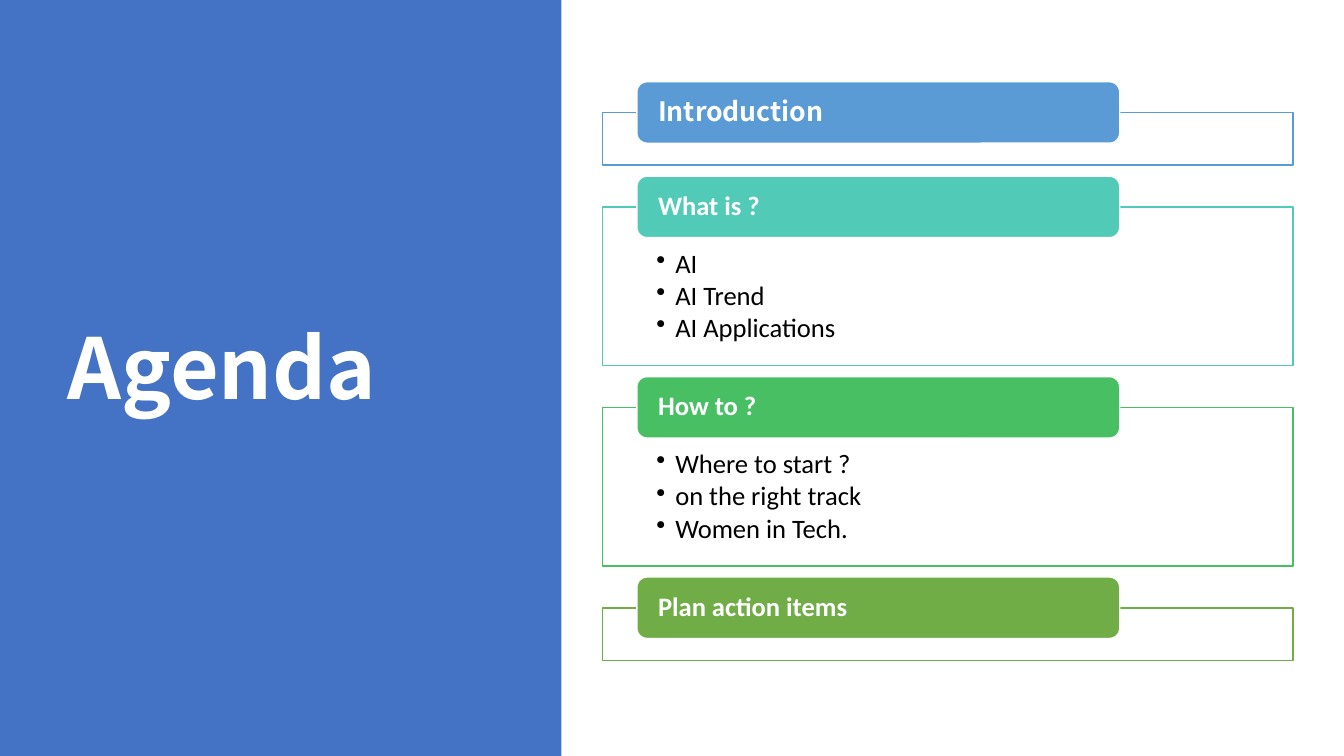
import lxml.etree
import pptx
import pptx.dml.color
import pptx.enum.shapes
import pptx.enum.text
import pptx.oxml.ns
import pptx.util

Cm, Pt = pptx.util.Cm, pptx.util.Pt
SHAPE = pptx.enum.shapes.MSO_SHAPE
ANCHOR = pptx.enum.text.MSO_ANCHOR
qn = pptx.oxml.ns.qn

COLORS = {
    "panel": "4472C4", "white": "FFFFFF", "black": "000000",
    "blue": "5B9BD5", "teal": "52CAB8", "green": "49BF64", "olive": "70AD47",
}
SANS, BODY = "Noto Sans CJK SC", "Calibri"
HEADER_LEFT, HEADER_WIDTH, HEADER_HEIGHT = 16.05, 12.17, 1.55
FRAME_LEFT, FRAME_WIDTH, FRAME_DROP = 15.19, 17.4, 0.78
EMPTY_HEIGHT, LIST_HEIGHT, SECTION_GAP = 1.32, 3.99, 0.28
SECTIONS = [
    ("Introduction", "blue", SANS, []),
    ("What is ?", "teal", BODY, ["AI", "AI Trend", "AI Applications"]),
    ("How to ?", "green", BODY, ["Where to start ?", "on the right track", "Women in Tech."]),
    ("Plan action items", "olive", BODY, []),
]


def rgb(name):
    return pptx.dml.color.RGBColor.from_string(COLORS[name])


def write_text(frame, text, *, font=BODY, size=19, color="white", bold=False,
               bullet=False, after=0, anchor=ANCHOR.MIDDLE, insets=None):
    frame.word_wrap = True
    frame.auto_size = pptx.enum.text.MSO_AUTO_SIZE.NONE
    frame.vertical_anchor = anchor
    if insets:
        (frame.margin_left, frame.margin_top,
         frame.margin_right, frame.margin_bottom) = map(Cm, insets)
    frame.text = text
    for paragraph in frame.paragraphs:
        paragraph.alignment = pptx.enum.text.PP_ALIGN.LEFT
        paragraph.line_spacing = 0.9
        paragraph.space_after = Pt(after)
        if bullet:
            properties = paragraph._p.get_or_add_pPr()
            properties.set("marL", str(Cm(0.48)))
            properties.set("indent", str(-Cm(0.48)))
            lxml.etree.SubElement(properties, qn("a:buChar")).set("char", "•")
        for run in paragraph.runs:
            run.font.name, run.font.size, run.font.bold = font, Pt(size), bold
            run.font.color.rgb = rgb(color)


class AgendaSlide:
    """Hold the agenda style and the slide that is being filled."""

    def __init__(self, deck):
        self.slide = deck.slides.add_slide(deck.slide_layouts[5])

    def block(self, kind, left, top, width, height, fill, line=None, alpha=None):
        block = self.slide.shapes.add_shape(kind, Cm(left), Cm(top), Cm(width), Cm(height))
        block.shadow.inherit = False
        block.fill.solid()
        block.fill.fore_color.rgb = rgb(fill)
        if alpha:
            fill_color = block.element.spPr.find(qn("a:solidFill"))[0]
            lxml.etree.SubElement(fill_color, qn("a:alpha")).set("val", str(alpha * 1000))
        if line:
            block.line.color.rgb = rgb(line)
            block.line.width = Pt(1)
        else:
            block.line.fill.background()
        return block

    def title(self, text):
        title = self.slide.shapes.title
        title.left, title.top, title.width, title.height = map(Cm, (1.45, 1.73, 10.57, 15.29))
        write_text(title.text_frame, text, font=SANS, size=60, bold=True)

    def side_panel(self):
        panel = self.block(SHAPE.RECTANGLE, 0, 0, 14.15, 19.05, "panel")
        self.slide.shapes.title.element.addprevious(panel.element)

    def section(self, top, heading, color, font, topics):
        height = LIST_HEIGHT if topics else EMPTY_HEIGHT
        frame_top = top + FRAME_DROP
        frame = self.block(SHAPE.RECTANGLE, FRAME_LEFT, frame_top, FRAME_WIDTH, height,
                           "white", color, alpha=90)
        if topics:
            write_text(frame.text_frame, "\n".join(topics), color="black", bullet=True,
                       after=2.5, anchor=ANCHOR.TOP, insets=(1.35, 1.09, 1.35, 0.38))
        header = self.block(SHAPE.ROUNDED_RECTANGLE, HEADER_LEFT, top, HEADER_WIDTH,
                            HEADER_HEIGHT, color, "white")
        write_text(header.text_frame, heading, font=font, bold=True, insets=(0.46, 0, 0.46, 0))
        return frame_top + height + SECTION_GAP


def main():
    deck = pptx.Presentation()
    deck.slide_width, deck.slide_height = Cm(33.87), Cm(19.05)
    agenda = AgendaSlide(deck)
    agenda.title("Agenda")
    agenda.side_panel()
    top = 2.06
    for section in SECTIONS:
        top = agenda.section(top, *section)
    deck.save("out.pptx")


if __name__ == "__main__":
    main()
